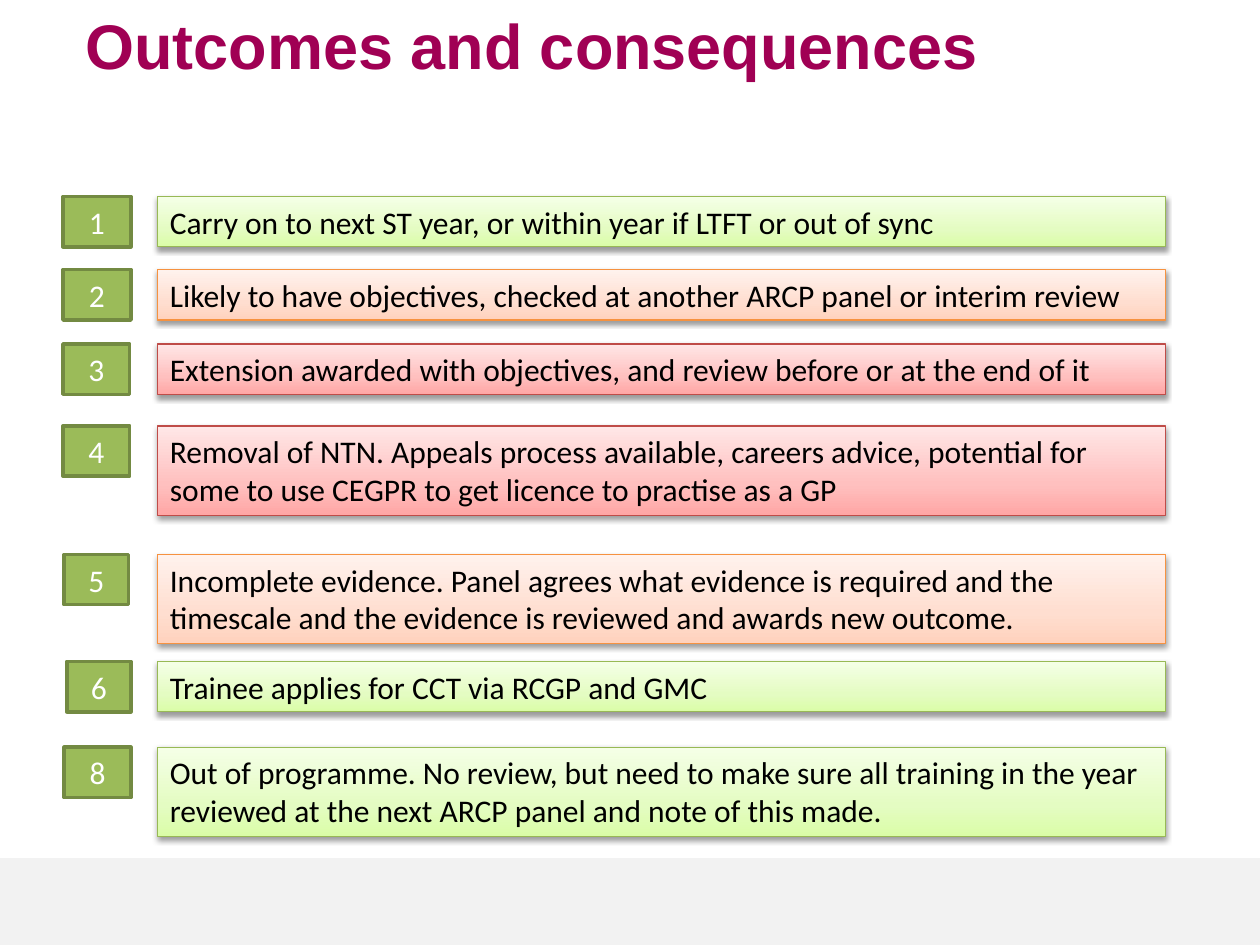
from dataclasses import dataclass

from lxml import etree
from pptx import Presentation
from pptx import util as u
from pptx.dml.color import RGBColor
from pptx.enum import shapes, text
from pptx.oxml import ns


@dataclass(frozen=True)
class Theme:
    heading: str = "A00054"
    footer: str = "F2F2F2"
    badge: str = "9BBB59"
    badge_line: str = "738A42"
    white: str = "FFFFFF"
    black: str = "000000"
    # Each tone: outline, then gradient colours from bottom to top
    green: tuple = ("98B955", "DAFDA7", "E4FCC2", "F5FFE7")
    orange: tuple = ("F69240", "FFD2BD", "FFDED0", "FFF2ED")
    red: tuple = ("BF4C48", "FFA6A5", "FFC0BF", "FFE7E7")
    title_size: int = 36
    body_size: int = 18


theme = Theme()

deck = Presentation()
deck.slide_width, deck.slide_height = u.Inches(10), u.Inches(7.5)
page = deck.slides.add_slide(deck.slide_layouts[6])


def add_box(left, top, width, height, fill, line=None, line_width=0.75,
            words="", colour=theme.black, align=text.PP_ALIGN.LEFT):
    """Add a rectangle; fill is one colour or the colours of a gradient."""
    box = page.shapes.add_shape(
        shapes.MSO_SHAPE.RECTANGLE, u.Inches(left), u.Inches(top),
        u.Inches(width), u.Inches(height))
    box.shadow.inherit = False
    if isinstance(fill, str):
        box.fill.solid()
        box.fill.fore_color.rgb = RGBColor.from_string(fill)
    else:
        box.fill.gradient()
        box.fill.gradient_angle = 90
        stops = box._element.spPr.find(".//" + ns.qn("a:gsLst"))
        for stop in list(stops):
            stops.remove(stop)
        for position, stop_colour in zip((0, 35000, 100000), fill):
            stop = etree.SubElement(stops, ns.qn("a:gs"), pos=str(position))
            etree.SubElement(stop, ns.qn("a:srgbClr"), val=stop_colour)
    if line:
        box.line.color.rgb = RGBColor.from_string(line)
        box.line.width = u.Pt(line_width)
    else:
        box.line.fill.background()
    if words:
        frame = box.text_frame
        frame.word_wrap = True
        frame.auto_size = text.MSO_AUTO_SIZE.SHAPE_TO_FIT_TEXT
        frame.vertical_anchor = text.MSO_ANCHOR.TOP
        para = frame.paragraphs[0]
        para.text = words
        para.alignment = align
        para.font.name = "Calibri"
        para.font.size = u.Pt(theme.body_size)
        para.font.color.rgb = RGBColor.from_string(colour)
    return box


def add_shadow(box):
    effects = box._element.spPr.find(ns.qn("a:effectLst"))
    shadow = etree.SubElement(
        effects, ns.qn("a:outerShdw"), blurRad=str(u.Pt(3.1)),
        dist=str(u.Pt(1.6)), dir="5400000", rotWithShape="0")
    colour = etree.SubElement(shadow, ns.qn("a:srgbClr"), val=theme.black)
    etree.SubElement(colour, ns.qn("a:alpha"), val="38000")


add_box(0, 6.81, 10, 0.69, theme.footer)

title = page.shapes.add_textbox(
    u.Inches(-0.28), 0, u.Inches(9), u.Inches(0.91))
title.text_frame.word_wrap = True
heading = title.text_frame.paragraphs[0]
heading.text = "Outcomes and consequences"
heading.alignment = text.PP_ALIGN.CENTER
heading.font.name = "Arial"
heading.font.size = u.Pt(theme.title_size)
heading.font.bold = True
heading.font.color.rgb = RGBColor.from_string(theme.heading)

# Number, badge left, badge width, top, lines of text, tone, wording
outcomes = [
    ("1", 0.5, 0.54, 1.56, 1, theme.green,
     "Carry on to next ST year, or within year if LTFT or out of sync"),
    ("2", 0.5, 0.54, 2.14, 1, theme.orange,
     "Likely to have objectives, checked at another ARCP panel or "
     "interim review"),
    ("3", 0.5, 0.53, 2.73, 1, theme.red,
     "Extension awarded with objectives, and review before or at the "
     "end of it"),
    ("4", 0.5, 0.53, 3.38, 2, theme.red,
     "Removal of NTN. Appeals process available, careers advice, potential "
     "for some to use CEGPR to get licence to practise as a GP"),
    ("5", 0.51, 0.51, 4.4, 2, theme.orange,
     "Incomplete evidence. Panel agrees what evidence is required and the "
     "timescale and the evidence is reviewed and awards new outcome."),
    ("6", 0.53, 0.51, 5.25, 1, theme.green,
     "Trainee applies for CCT via RCGP and GMC"),
    ("8", 0.51, 0.53, 5.93, 2, theme.green,
     "Out of programme. No review, but need to make sure all training in "
     "the year reviewed at the next ARCP panel and note of this made."),
]
line_height, padding = 0.31, 0.09

for number, left, width, top, lines, tone, wording in outcomes:
    add_box(left, top, width, line_height + padding, theme.badge,
            theme.badge_line, 2, number, theme.white, text.PP_ALIGN.CENTER)
    outline, *gradient = tone
    add_shadow(add_box(1.25, top, 8, lines * line_height + padding,
                       gradient, outline, words=wording))

deck.save("out.pptx")
